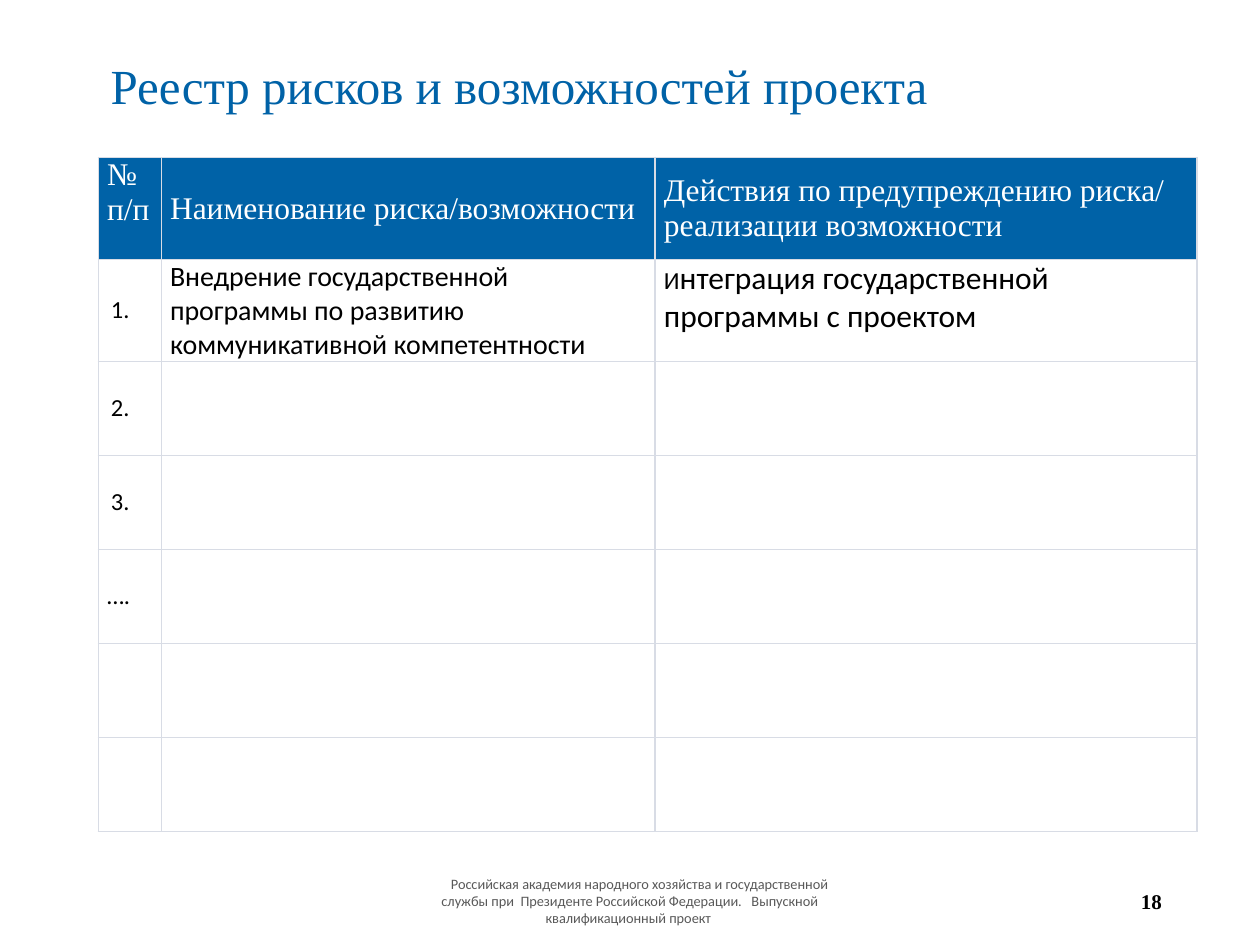
import pptx
import pptx.util
import pptx.dml.color
import pptx.enum.text
import pptx.oxml
import pptx.oxml.ns

Inches, Pt = pptx.util.Inches, pptx.util.Pt
ALIGN, ANCHOR = pptx.enum.text.PP_ALIGN, pptx.enum.text.MSO_ANCHOR
COLORS = {"blue": "0062A7", "white": "FFFFFF", "black": "000000",
          "gray": "595959", "border": "D8DCE5"}
SERIF, SANS = "Times New Roman", "Calibri"


def write(frame, text, size=14, font=SANS, color="black", bold=False,
          align=ALIGN.LEFT, spacing=None, continued=False):
    """Write one paragraph per line of text, or continue the last paragraph."""
    for index, line in enumerate(text.split("\n")):
        paragraph = frame.add_paragraph() if index else frame.paragraphs[-1]
        if not continued:
            paragraph.alignment = align
            paragraph.line_spacing = spacing
        run = paragraph.add_run()
        run.text = line
        run.font.size, run.font.name, run.font.bold = Pt(size), font, bold
        run.font.color.rgb = pptx.dml.color.RGBColor.from_string(COLORS[color])


def style_cell(cell, fill, anchor, tight):
    """Set the borders, fill, anchor and margins of a table cell."""
    properties = cell._tc.get_or_add_tcPr()
    for side in "LRTB":
        properties.append(pptx.oxml.parse_xml(
            f'<a:ln{side} {pptx.oxml.ns.nsdecls("a")} w="{Pt(1)}"><a:solidFill>'
            f'<a:srgbClr val="{COLORS["border"]}"/></a:solidFill></a:ln{side}>'))
    cell.fill.solid()
    cell.fill.fore_color.rgb = pptx.dml.color.RGBColor.from_string(COLORS[fill])
    cell.vertical_anchor = anchor
    if tight:
        cell.margin_left = cell.margin_right = Inches(0.07)
        cell.margin_top = cell.margin_bottom = 0


presentation = pptx.Presentation()
presentation.slide_width, presentation.slide_height = Inches(10), Inches(7.5)
slide = presentation.slides.add_slide(presentation.slide_layouts[6])

# Title, footer and page number
left, footer_top, footer_height = 0.78, 6.95, 0.4
text_boxes = [
    ((left, 0.25, 8.39, 0.9), "Реестр рисков и возможностей проекта",
     dict(size=28, font=SERIF, color="blue", spacing=0.9)),
    ((3.31, footer_top, 3.38, footer_height),
     "      Российская академия народного хозяйства и государственной службы при"
     "  Президенте Российской Федерации.   Выпускной квалификационный проект ",
     dict(size=8.2, color="gray", align=ALIGN.CENTER)),
    ((7.07, footer_top, 2.25, footer_height), "18",
     dict(size=12, font=SERIF, bold=True, align=ALIGN.RIGHT)),
]
for box, text, text_format in text_boxes:
    frame = slide.shapes.add_textbox(*map(Inches, box)).text_frame
    frame.word_wrap = True
    frame.vertical_anchor = ANCHOR.MIDDLE
    write(frame, text, **text_format)

# Risk table: two tall rows, the others share the rest of the height
table_height, tall_row, empty_rows = 5.35, 0.81, 5
column_widths = [0.5, 3.92, 4.3]
row_heights = [tall_row] * 2 + [(table_height - 2 * tall_row) / empty_rows] * empty_rows
table = slide.shapes.add_table(
    len(row_heights), len(column_widths), Inches(left), Inches(1.25),
    Inches(sum(column_widths)), Inches(table_height)).table
for column, width in zip(table.columns, column_widths):
    column.width = Inches(width)
for row, height in zip(table.rows, row_heights):
    row.height = Inches(height)

# Header row
headers = ["№\nп/п", "Наименование риска/возможности",
           "Действия по предупреждению риска/\nреализации возможности"]
for index, header in enumerate(headers):
    cell = table.cell(0, index)
    style_cell(cell, "blue", ANCHOR.MIDDLE if index else ANCHOR.TOP, tight=True)
    write(cell.text_frame, header, size=18, font=SERIF, color="white")

# Body rows with their numbers
numbers = ["1.", "2.", "3.", "….", "", ""]
for row_index, number in enumerate(numbers, start=1):
    for column_index in range(len(column_widths)):
        is_number = column_index == 0
        style_cell(table.cell(row_index, column_index), "white",
                   ANCHOR.MIDDLE if is_number else ANCHOR.TOP,
                   tight=not is_number or number == "….")
    if number:
        write(table.cell(row_index, 0).text_frame, number)

# First risk and its response
write(table.cell(1, 1).text_frame,
      "Внедрение государственной программы по развитию коммуникативной компетентности",
      size=16)
response = table.cell(1, 2).text_frame
write(response, "И")
write(response, "нтеграция государственной программы с проектом", size=18, continued=True)

presentation.save("out.pptx")
